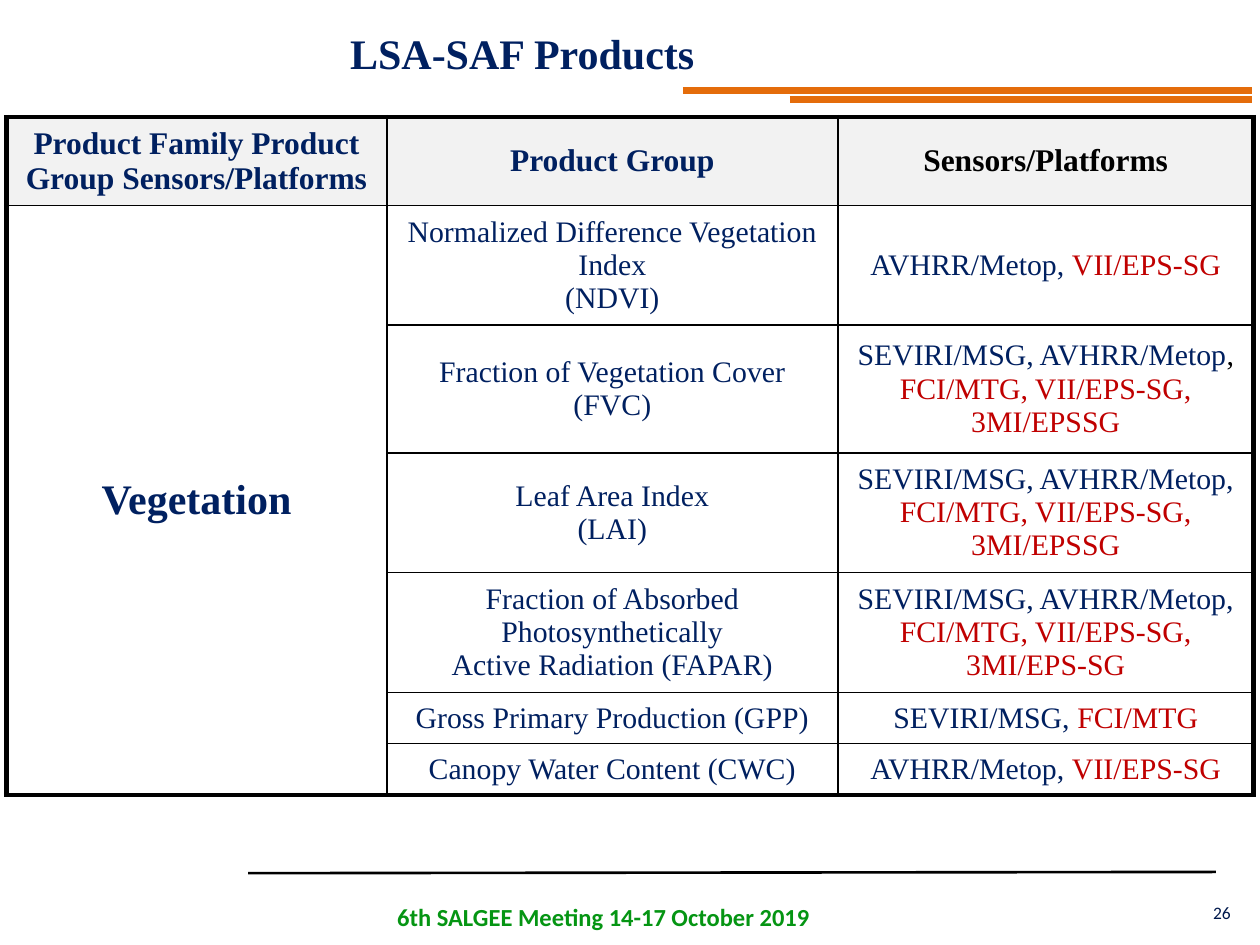
from typing import NamedTuple

import pptx
import pptx.dml.color
import pptx.enum.shapes
import pptx.enum.text
import pptx.oxml
import pptx.oxml.ns
import pptx.util

SLIDE_WIDTH = pptx.util.Inches(10)
SLIDE_HEIGHT = pptx.util.Inches(7.5)
SERIF, SANS = "Times New Roman", "Calibri"
NAVY, RED, BLACK, WHITE = "002060", "C00000", "000000", "FFFFFF"
ORANGE, GREEN, DARK_BLUE, HEADER_GREY = "E46C0A", "059513", "00194C", "F2F2F2"
OUTER_BORDER, INNER_BORDER = 3, 1


class Run(NamedTuple):
    text: str
    color: str = NAVY


class Box(NamedTuple):
    """A frame in percent of the slide's width and height."""
    left: float
    top: float
    width: float
    height: float


class Rule(NamedTuple):
    """A line whose ends are in percent of the slide's width and height."""
    start: tuple[float, float]
    end: tuple[float, float]
    color: str
    weight: float


class Product(NamedTuple):
    group: list[list[Run]]
    sensors: list[list[Run]]
    height: float


def both_sensors(current: str, planned: str) -> list[list[Run]]:
    return [[Run(current), Run(planned, RED)]]


def stacked_sensors(planned: str, comma_color: str = NAVY) -> list[list[Run]]:
    return [[Run("SEVIRI/MSG, AVHRR/Metop"), Run(",", comma_color)],
            [Run(planned, RED)]]


def lines(*texts: str, color: str = NAVY) -> list[list[Run]]:
    return [[Run(text, color)] for text in texts]


RULES = [
    Rule((62.7, 10.53), (99.4, 10.53), ORANGE, 4),
    Rule((54.2, 9.6), (99.4, 9.6), ORANGE, 4),
    Rule((19.7, 92.4), (96.5, 92.27), BLACK, 1.5),
]
TABLE_BOX = Box(0.5, 12.4, 99, 71.6)
COLUMN_WIDTHS = [30.2, 35.8, 33]
HEADER_HEIGHT = 9.33
HEADERS = [Run("Product Family Product Group Sensors/Platforms"),
           Run("Product Group"), Run("Sensors/Platforms", BLACK)]
PRODUCTS = [
    Product(lines("Normalized Difference Vegetation Index", "(NDVI)"),
            both_sensors("AVHRR/Metop, ", "VII/EPS-SG"), 12.6),
    Product(lines("Fraction of Vegetation Cover (FVC)"),
            stacked_sensors("FCI/MTG, VII/EPS-SG, 3MI/EPSSG", BLACK), 13.5),
    Product(lines("Leaf Area Index", "(LAI)"),
            stacked_sensors("FCI/MTG, VII/EPS-SG, 3MI/EPSSG"), 12.6),
    Product(lines("Fraction of Absorbed Photosynthetically",
                  "Active Radiation (FAPAR)"),
            stacked_sensors("FCI/MTG, VII/EPS-SG, 3MI/EPS-SG"), 12.6),
    Product(lines("Gross Primary Production (GPP)"),
            both_sensors("SEVIRI/MSG, ", "FCI/MTG"), 5.43),
    Product(lines("Canopy Water Content (CWC)"),
            both_sensors("AVHRR/Metop, ", "VII/EPS-SG"), 5.43),
]


def across(percent: float) -> int:
    return round(SLIDE_WIDTH * percent / 100)


def down(percent: float) -> int:
    return round(SLIDE_HEIGHT * percent / 100)


def frame(box: Box) -> tuple[int, int, int, int]:
    return across(box.left), down(box.top), across(box.width), down(box.height)


def rgb(color: str) -> pptx.dml.color.RGBColor:
    return pptx.dml.color.RGBColor.from_string(color)


def write(text_frame, paragraphs: list[list[Run]], *, size: float,
          font: str = SERIF, bold: bool = False, centred: bool = True) -> None:
    for index, runs in enumerate(paragraphs):
        paragraph = (text_frame.add_paragraph() if index
                     else text_frame.paragraphs[0])
        paragraph.alignment = (pptx.enum.text.PP_ALIGN.CENTER if centred
                               else pptx.enum.text.PP_ALIGN.LEFT)
        for part in runs:
            run = paragraph.add_run()
            run.text = part.text
            run.font.name = font
            run.font.size = pptx.util.Pt(size)
            run.font.bold = bold
            run.font.color.rgb = rgb(part.color)


def draw_rule(slide, rule: Rule) -> None:
    (x1, y1), (x2, y2) = rule.start, rule.end
    connector = slide.shapes.add_connector(
        pptx.enum.shapes.MSO_CONNECTOR.STRAIGHT,
        across(x1), down(y1), across(x2), down(y2))
    connector.line.color.rgb = rgb(rule.color)
    connector.line.width = pptx.util.Pt(rule.weight)
    properties = connector._element.spPr
    properties.append(pptx.oxml.parse_xml(
        f'<a:effectLst {pptx.oxml.ns.nsdecls("a")}/>'))


def draw_text(slide, box: Box, run: Run, *, wrap: bool = True, **text_format) -> None:
    text_box = slide.shapes.add_textbox(*frame(box))
    text_box.text_frame.word_wrap = wrap
    write(text_box.text_frame, [[run]], **text_format)


def set_borders(cell, weights: dict[str, float]) -> None:
    properties = cell._tc.get_or_add_tcPr()
    for index, side in enumerate("LRTB"):
        properties.insert(index, pptx.oxml.parse_xml(
            f'<a:ln{side} {pptx.oxml.ns.nsdecls("a")} '
            f'w="{pptx.util.Pt(weights[side])}">'
            f'<a:solidFill><a:srgbClr val="{BLACK}"/></a:solidFill></a:ln{side}>'))


def format_cells(table) -> None:
    last_row, last_column = len(table.rows) - 1, len(table.columns) - 1
    for row in range(last_row + 1):
        for column in range(last_column + 1):
            cell = table.cell(row, column)
            cell.vertical_anchor = pptx.enum.text.MSO_ANCHOR.MIDDLE
            cell.fill.solid()
            cell.fill.fore_color.rgb = rgb(WHITE if row else HEADER_GREY)
            bottom_row = last_row if row and column == 0 else row
            edges = {"L": column == 0, "R": column == last_column,
                     "T": row == 0, "B": bottom_row == last_row}
            set_borders(cell, {side: OUTER_BORDER if outer else INNER_BORDER
                               for side, outer in edges.items()})


def draw_table(slide) -> None:
    table = slide.shapes.add_table(
        len(PRODUCTS) + 1, len(COLUMN_WIDTHS), *frame(TABLE_BOX)).table
    for column, width in zip(table.columns, COLUMN_WIDTHS):
        column.width = across(width)
    heights = [HEADER_HEIGHT] + [product.height for product in PRODUCTS]
    for row, height in zip(table.rows, heights):
        row.height = down(height)
    format_cells(table)
    table.cell(1, 0).merge(table.cell(len(PRODUCTS), 0))
    for column, header in enumerate(HEADERS):
        write(table.cell(0, column).text_frame, [[header]], size=18, bold=True)
    write(table.cell(1, 0).text_frame, lines("Vegetation"), size=24, bold=True)
    for row, product in enumerate(PRODUCTS, start=1):
        write(table.cell(row, 1).text_frame, product.group, size=17)
        write(table.cell(row, 2).text_frame, product.sensors, size=17)


def draw_title(slide) -> None:
    title = slide.shapes.title
    title.left, title.top, title.width, title.height = frame(
        Box(-0.4, 2.13, 83.7, 6.8))
    title.text_frame.vertical_anchor = pptx.enum.text.MSO_ANCHOR.MIDDLE
    write(title.text_frame, lines("LSA-SAF Products"), size=24, bold=True)


def main() -> None:
    presentation = pptx.Presentation()
    presentation.slide_width = SLIDE_WIDTH
    presentation.slide_height = SLIDE_HEIGHT
    slide = presentation.slides.add_slide(presentation.slide_layouts[5])
    draw_title(slide)
    for rule in RULES:
        draw_rule(slide, rule)
    draw_text(slide, Box(28.3, 94.8, 39.2, 4.53),
              Run("6th SALGEE Meeting 14-17 October 2019", GREEN),
              size=14, font=SANS, bold=True)
    draw_text(slide, Box(95.3, 94.8, 3.6, 3.6), Run("26", DARK_BLUE),
              wrap=False, size=10, font=SANS, centred=False)
    draw_table(slide)
    presentation.save("out.pptx")


if __name__ == "__main__":
    main()
